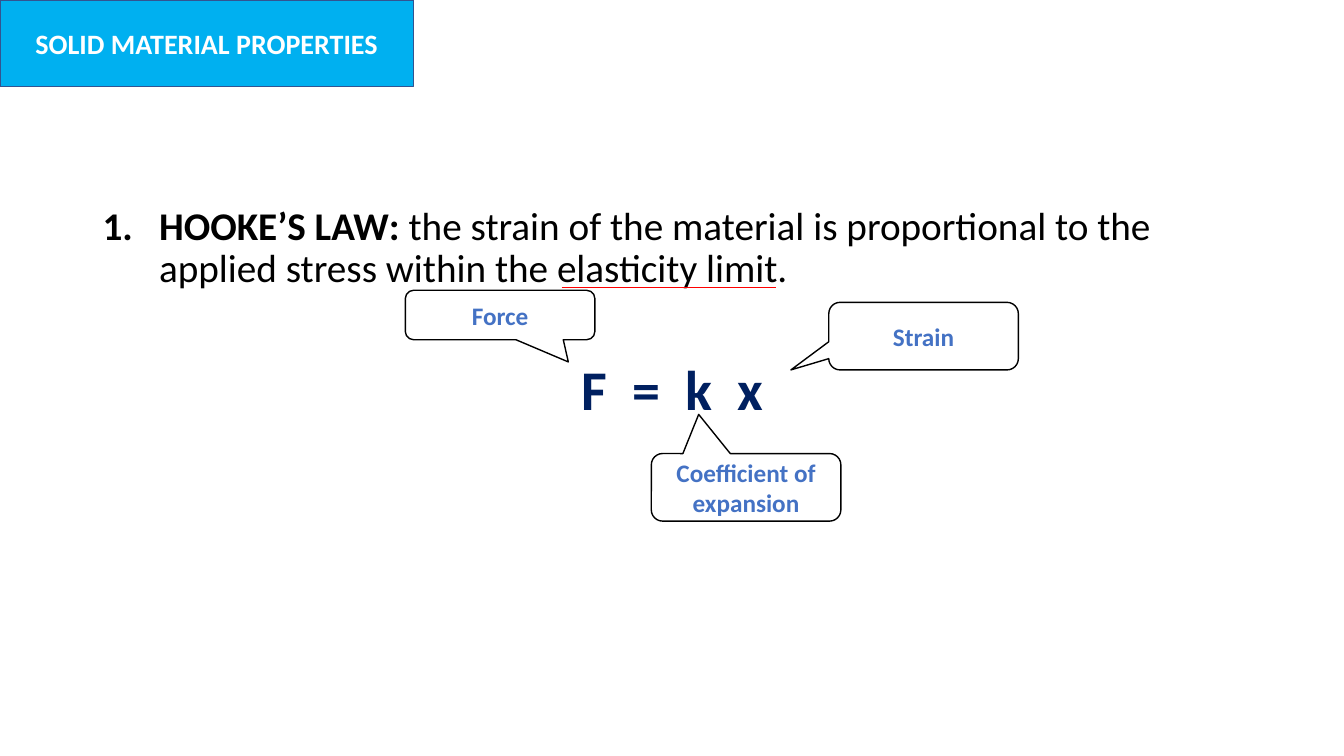
from lxml import etree
from pptx import Presentation
from pptx import util as u
from pptx.dml.color import RGBColor
from pptx.enum import shapes, text
from pptx.oxml import ns

WHITE = RGBColor(0xFF, 0xFF, 0xFF)
BLACK = RGBColor(0x00, 0x00, 0x00)
SKY = RGBColor(0x00, 0xB0, 0xF0)
BORDER = RGBColor(0x32, 0x54, 0x91)
BLUE = RGBColor(0x44, 0x72, 0xC4)
NAVY = RGBColor(0x00, 0x20, 0x60)
RED = RGBColor(0xFF, 0x00, 0x00)
CENTER = text.PP_ALIGN.CENTER
FONT = "Calibri"


def write(para, words, size, color, bold=False, align=None):
    """Add one formatted run to a paragraph."""
    if align is not None:
        para.alignment = align
    span = para.add_run()
    span.text = words
    span.font.name = FONT
    span.font.size = u.Pt(size)
    span.font.color.rgb = color
    span.font.bold = bold


def place(*lengths):
    return [u.Inches(length) for length in lengths]


class LessonSlide:
    def __init__(self, deck):
        self.slide = deck.slides.add_slide(deck.slide_layouts[6])

    def box(self, kind, at, words, size, color, fill, line):
        box = self.slide.shapes.add_shape(kind, *place(*at))
        box.shadow.inherit = False
        box.fill.solid()
        box.fill.fore_color.rgb = fill
        box.line.color.rgb = line
        box.line.width = u.Pt(1)
        frame = box.text_frame
        frame.word_wrap = True
        frame.vertical_anchor = text.MSO_ANCHOR.MIDDLE
        write(frame.paragraphs[0], words, size, color, bold=True, align=CENTER)
        return box

    def callout(self, at, words, tip):
        kind = shapes.MSO_SHAPE.ROUNDED_RECTANGULAR_CALLOUT
        box = self.box(kind, at, words, 18, BLUE, WHITE, BLACK)
        box.adjustments[0], box.adjustments[1] = tip

    def text_area(self, at):
        area = self.slide.shapes.add_textbox(*place(*at))
        area.text_frame.word_wrap = True
        return area.text_frame

    def number(self, para, indent):
        props = para._p.get_or_add_pPr()
        props.set("marL", str(u.Inches(indent)))
        props.set("indent", str(u.Inches(-indent)))
        bullet = etree.SubElement(props, ns.qn("a:buAutoNum"))
        bullet.set("type", "arabicPeriod")

    def rule(self, start, end, color, width):
        line = self.slide.shapes.add_connector(
            shapes.MSO_CONNECTOR.STRAIGHT, *place(*start, *end))
        line.line.color.rgb = color
        line.line.width = u.Pt(width)
        etree.SubElement(line._element.spPr, ns.qn("a:effectLst"))


def main():
    deck = Presentation()
    deck.slide_width, deck.slide_height = place(13.33, 7.5)
    page = LessonSlide(deck)

    # Heading
    page.box(shapes.MSO_SHAPE.RECTANGLE, (0, 0, 4.1, 0.86),
             "SOLID MATERIAL PROPERTIES", 20, WHITE, SKY, BORDER)

    # Law and equation
    frame = page.text_area((0.92, 2, 11.5, 4.76))
    law, equation = frame.paragraphs[0], frame.add_paragraph()
    for para, gap in ((law, 10), (equation, 51)):
        para.line_spacing = 0.9
        para.space_before = u.Pt(gap)
    page.number(law, 0.56)
    write(law, "HOOKE’S LAW: ", 28, BLACK, bold=True)
    write(law, "the strain of the material is proportional to the applied "
               "stress within the elasticity limit.", 28, BLACK)
    write(equation, "F  =  k  x", 40, NAVY, bold=True, align=CENTER)

    # Labels of the equation's terms
    for left, top, height, words, tip in (
            (4.02, 2.88, 0.49, "Force", (0.36, 0.95)),
            (6.46, 4.5, 0.67, "Coefficient of expansion", (-0.25, -1.08)),
            (8.22, 3, 0.67, "Strain", (-0.7, 0.5))):
        page.callout((left, top, 1.88, height), words, tip)

    # Underline of the elasticity limit
    page.rule((5.57, 2.85), (7.7, 2.85), RED, 0.5)

    deck.save("out.pptx")


if __name__ == "__main__":
    main()
